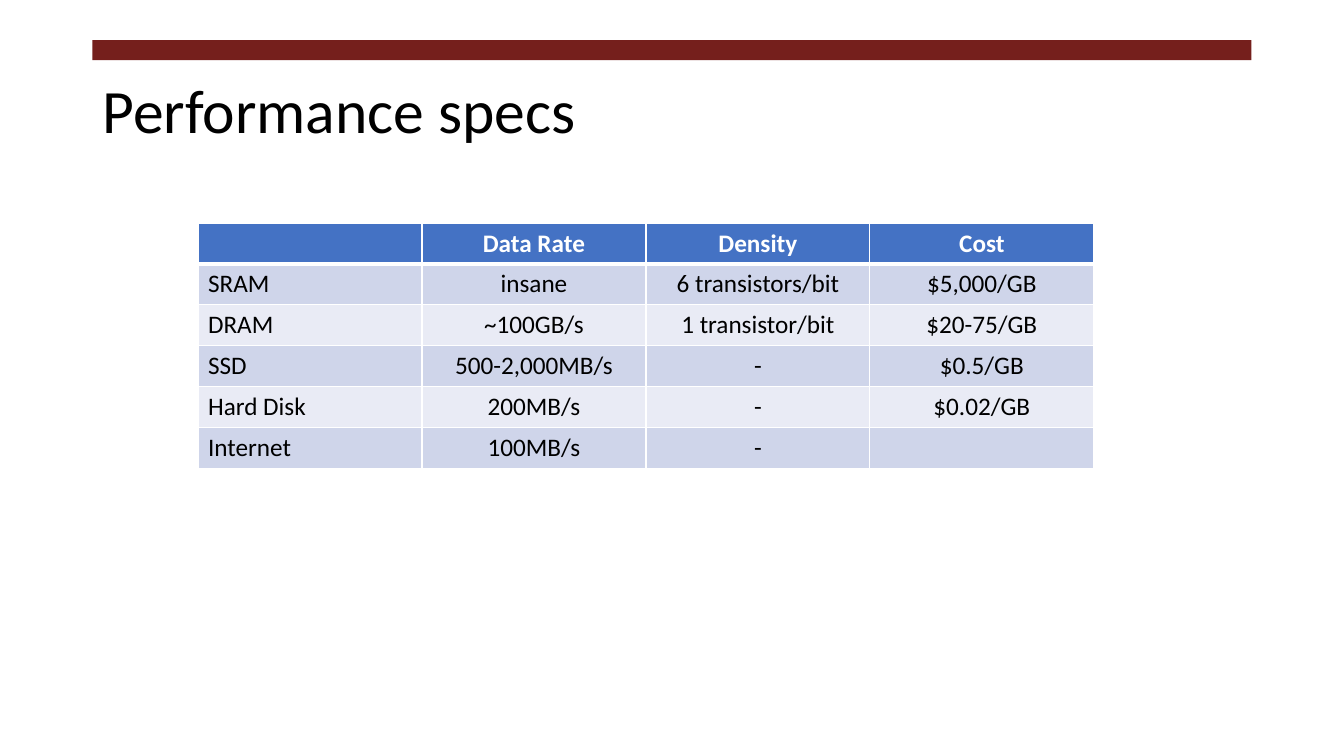
from lxml import etree
from pptx import Presentation
from pptx.dml.color import RGBColor
from pptx.enum import shapes, text
from pptx.oxml import ns
from pptx.util import Cm, Pt


def paint(fill, color):
    fill.solid()
    fill.fore_color.rgb = RGBColor.from_string(color)


def add_border(cell, side, points):
    """Draw a white line on one side (L, R, T or B) of a cell; call before filling it."""
    properties = cell._tc.get_or_add_tcPr()
    line = etree.SubElement(properties, ns.qn(f"a:ln{side}"), w=str(Pt(points)))
    fill = etree.SubElement(line, ns.qn("a:solidFill"))
    etree.SubElement(fill, ns.qn("a:srgbClr"), val="FFFFFF")


presentation = Presentation()
presentation.slide_width = Cm(33.87)
presentation.slide_height = Cm(19.05)
slide = presentation.slides.add_slide(presentation.slide_layouts[5])

title = slide.shapes.title
title.left, title.top, title.width, title.height = Cm(2.33), Cm(1.01), Cm(29.21), Cm(3.68)
title.text_frame.text = "Performance specs"
title.text_frame.vertical_anchor = text.MSO_ANCHOR.MIDDLE
paragraph = title.text_frame.paragraphs[0]
paragraph.alignment = text.PP_ALIGN.LEFT
paragraph.line_spacing = 0.9
font = paragraph.runs[0].font
font.name, font.size = "Calibri", Pt(44)
paint(font.fill, "000000")

bar = slide.shapes.add_shape(
    shapes.MSO_SHAPE.RECTANGLE, title.left, title.top, title.width, Cm(0.51))
bar.shadow.inherit = False
paint(bar.fill, "751F1C")
bar.line.fill.background()
title.element.addprevious(bar.element)

specs = [
    ("", "Data Rate", "Density", "Cost"),
    ("SRAM", "insane", "6 transistors/bit", "$5,000/GB"),
    ("DRAM", "~100GB/s", "1 transistor/bit", "$20-75/GB"),
    ("SSD", "500-2,000MB/s", "-", "$0.5/GB"),
    ("Hard Disk", "200MB/s", "-", "$0.02/GB"),
    ("Internet", "100MB/s", "-", ""),
]
table = slide.shapes.add_table(
    len(specs), len(specs[0]), Cm(4.99), Cm(5.62), Cm(22.58), Cm(6.18)).table

for row, values in enumerate(specs):
    is_header = row == 0
    row_color = "4472C4" if is_header else ("E9EBF5", "CFD5EA")[row % 2]
    for column, value in enumerate(values):
        cell = table.cell(row, column)
        add_border(cell, "L", 1)
        add_border(cell, "R", 1)
        add_border(cell, "T", 3 if row == 1 else 1)
        add_border(cell, "B", 3 if is_header else 1)
        paint(cell.fill, row_color)
        cell.text_frame.text = value
        paragraph = cell.text_frame.paragraphs[0]
        paragraph.alignment = text.PP_ALIGN.CENTER if column else text.PP_ALIGN.LEFT
        for run in paragraph.runs:
            run.font.name, run.font.size, run.font.bold = "Calibri", Pt(18), is_header
            paint(run.font.fill, "FFFFFF" if is_header else "000000")

presentation.save("out.pptx")
